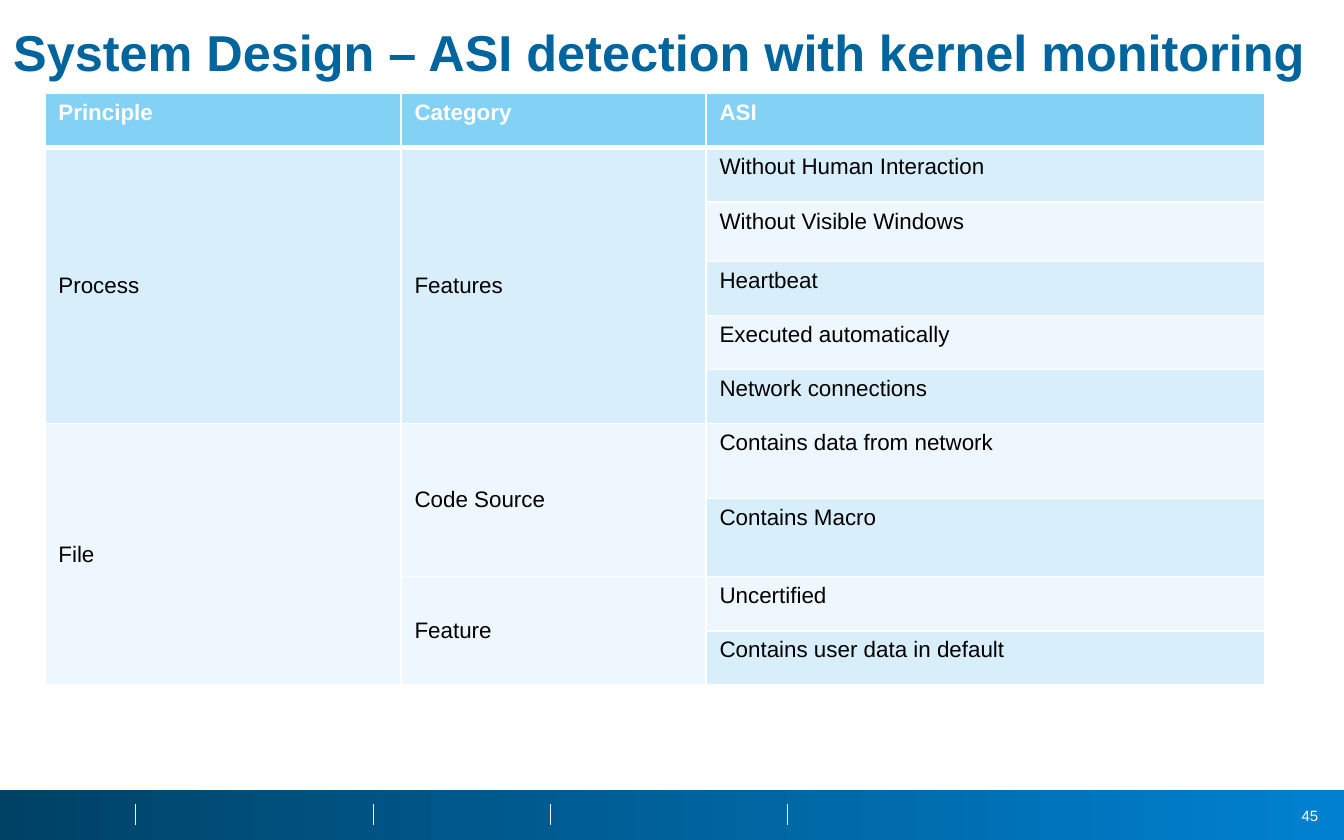
from lxml.etree import SubElement
from pptx import Presentation
from pptx.dml.color import RGBColor
from pptx.enum.shapes import MSO_CONNECTOR, MSO_SHAPE
from pptx.enum.text import MSO_ANCHOR, PP_ALIGN
from pptx.oxml.ns import qn
from pptx.util import Pt

HEADERS = ["Principle", "Category", "ASI"]
INDICATORS = [
    "Without Human Interaction",
    "Without Visible Windows",
    "Heartbeat",
    "Executed automatically",
    "Network connections",
    "Contains data from network",
    "Contains Macro",
    "Uncertified",
    "Contains user data in default",
]
# text, column, first row, last row
GROUPS = [
    ("Process", 0, 1, 5),
    ("Features", 1, 1, 5),
    ("File", 0, 6, 9),
    ("Code Source", 1, 6, 7),
    ("Feature", 1, 8, 9),
]
COLUMN_WIDTHS = [190.8, 163.4, 299.5]
ROW_HEIGHTS = [29.2, 29.2, 31.9, 28.9, 28.9, 28.9, 40.3, 41.8, 29, 29.2]
HEADER_FILL = "83D1F5"
BAND_FILLS = ["EDF7FD", "D9EEFB"]


def color(value):
    return RGBColor.from_string(value)


def add_text(frame, text, size, text_color, bold=False):
    """Write one run into the first paragraph and return the paragraph."""
    paragraph = frame.paragraphs[0]
    span = paragraph.add_run()
    span.text = text
    span.font.name = "Arial"
    span.font.size = Pt(size)
    span.font.bold = bold
    span.font.color.rgb = color(text_color)
    return paragraph


deck = Presentation()
deck.slide_width, deck.slide_height = Pt(720), Pt(450)
page = deck.slides.add_slide(deck.slide_layouts[6])

# Footer band with separators and page number
footer = page.shapes.add_shape(MSO_SHAPE.RECTANGLE, Pt(0), Pt(423), Pt(720), Pt(27))
footer.shadow.inherit = False
footer.line.fill.background()
footer.fill.gradient()
footer.fill.gradient_angle = 0
for stop, stop_color in zip(footer.fill.gradient_stops, ["004266", "0081D0"]):
    stop.color.rgb = color(stop_color)

for x in [72.6, 200.2, 295, 421.6]:
    separator = page.shapes.add_connector(
        MSO_CONNECTOR.STRAIGHT, Pt(x), Pt(430.6), Pt(x), Pt(442)
    )
    separator.line.color.rgb = color("F2F2F2")
    separator.line.width = Pt(0.25)
    SubElement(separator.element.spPr, qn("a:effectLst"))

number_box = page.shapes.add_textbox(Pt(683.3), Pt(428.4), Pt(30), Pt(17))
number_box.text_frame.word_wrap = True
number_box.text_frame.vertical_anchor = MSO_ANCHOR.MIDDLE
add_text(number_box.text_frame, "45", 8, "FFFFFF").alignment = PP_ALIGN.RIGHT

# Title
title_box = page.shapes.add_textbox(Pt(0), Pt(11.5), Pt(738), Pt(30.2))
title_box.text_frame.word_wrap = True
title = add_text(
    title_box.text_frame,
    "System Design – ASI detection with kernel monitoring",
    27, "00649D", bold=True,
)
title.line_spacing = 0.9

# Table of indicators
table = page.shapes.add_table(
    len(ROW_HEIGHTS), len(COLUMN_WIDTHS), Pt(24.1), Pt(49.9),
    Pt(sum(COLUMN_WIDTHS)), Pt(sum(ROW_HEIGHTS)),
).table
for column, width in zip(table.columns, COLUMN_WIDTHS):
    column.width = Pt(width)
for row, height in zip(table.rows, ROW_HEIGHTS):
    row.height = Pt(height)

for row_index in range(len(ROW_HEIGHTS)):
    for column_index in range(len(COLUMN_WIDTHS)):
        cell = table.cell(row_index, column_index)
        properties = cell._tc.get_or_add_tcPr()
        for side in ["L", "R", "T", "B"]:
            heavy = (row_index, side) in [(0, "B"), (1, "T")]
            border = SubElement(
                properties, qn(f"a:ln{side}"), w=str(Pt(3 if heavy else 1))
            )
            fill = SubElement(border, qn("a:solidFill"))
            SubElement(fill, qn("a:srgbClr"), val="FFFFFF")
        cell.fill.solid()
        cell.fill.fore_color.rgb = color(
            BAND_FILLS[row_index % 2] if row_index else HEADER_FILL
        )

for column_index, text in enumerate(HEADERS):
    add_text(table.cell(0, column_index).text_frame, text, 12, "FFFFFF", bold=True)
for row_index, text in enumerate(INDICATORS, start=1):
    add_text(table.cell(row_index, 2).text_frame, text, 12, "000000")
for text, column_index, first, last in GROUPS:
    cell = table.cell(first, column_index)
    cell.merge(table.cell(last, column_index))
    cell.vertical_anchor = MSO_ANCHOR.MIDDLE
    add_text(cell.text_frame, text, 12, "000000")

deck.save("out.pptx")
